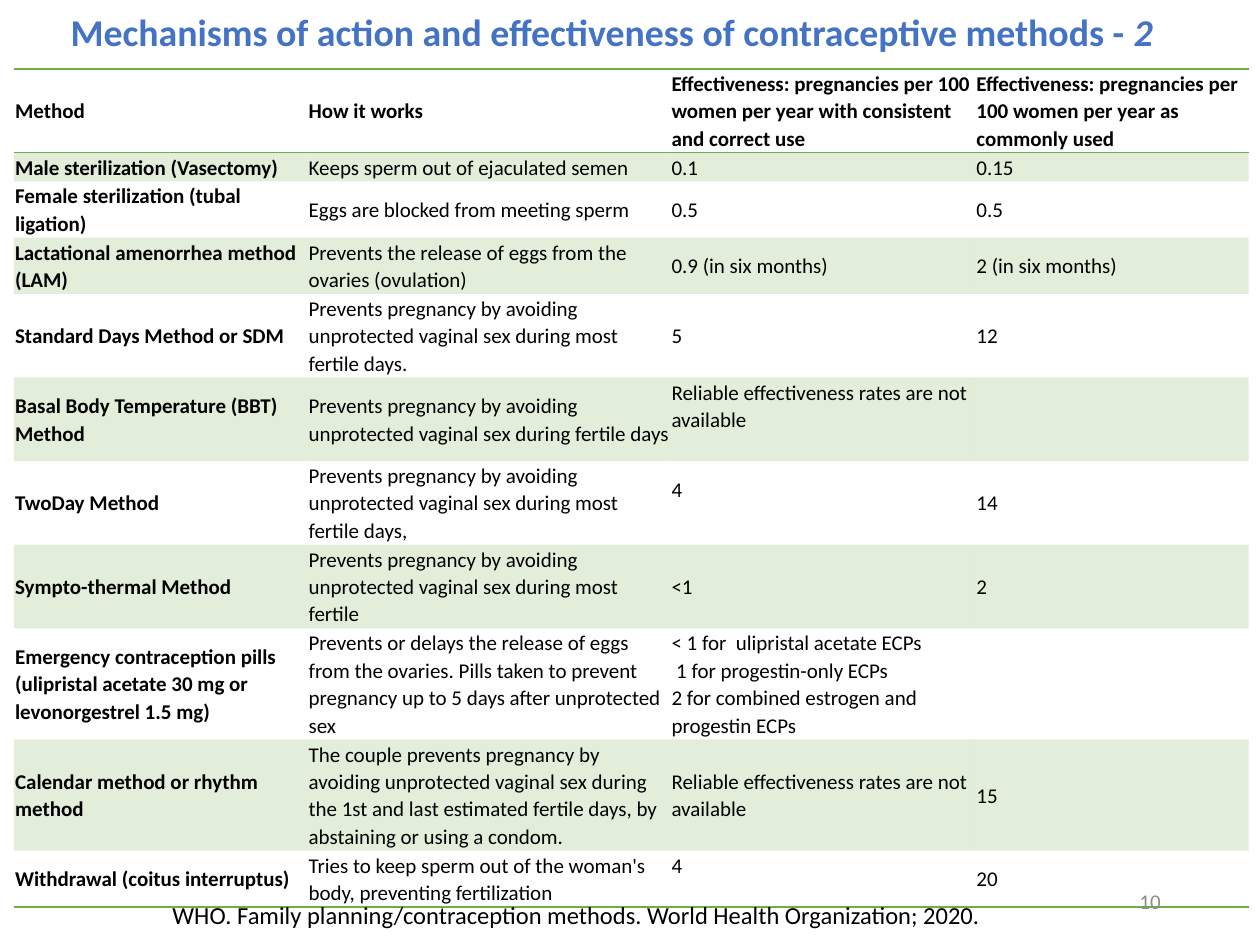
from lxml import etree
from pptx import Presentation
from pptx import util as u
from pptx.dml.color import RGBColor
from pptx.enum import text
from pptx.oxml.ns import qn

COLORS = {"title": "4472C4", "green": "70AD47", "text": "000000", "number": "8C8C8C"}
NO_STYLE_TABLE = "{2D5ABB26-0587-4C30-8999-92F81FD0307C}"
COLUMN_WIDTHS = [2.33, 2.88, 2.42, 2.17]
ROW_LINES = [3, 1, 2, 2, 3, 3, 3, 3, 4, 4, 2]
LINE_HEIGHT = u.Pt(15.7)
ROW_PADDING = u.Pt(0.7)
# Cells of the third column whose text sits half a line above the middle
RAISED_ROWS = {5, 6, 10}

METHODS = [
    ["Method", "How it works",
     "Effectiveness: pregnancies per 100 women per year with consistent and correct use",
     "Effectiveness: pregnancies per 100 women per year as commonly used"],
    ["Male sterilization (Vasectomy)", "Keeps sperm out of ejaculated semen", "0.1", "0.15"],
    ["Female sterilization (tubal ligation)", "Eggs are blocked from meeting sperm",
     "0.5", "0.5"],
    ["Lactational amenorrhea method (LAM)",
     "Prevents the release of eggs from the ovaries (ovulation)",
     "0.9 (in six months)", "2 (in six months)"],
    ["Standard Days Method or SDM",
     "Prevents pregnancy by avoiding unprotected vaginal sex during most fertile days.",
     "5", "12"],
    ["Basal Body Temperature (BBT) Method",
     "Prevents pregnancy by avoiding unprotected vaginal sex during fertile days",
     "Reliable effectiveness rates are not available", ""],
    ["TwoDay Method",
     "Prevents pregnancy by avoiding unprotected vaginal sex during most fertile days,",
     "4", "14"],
    ["Sympto-thermal Method",
     "Prevents pregnancy by avoiding unprotected vaginal sex during most fertile",
     "<1", "2"],
    ["Emergency contraception pills (ulipristal acetate 30 mg or levonorgestrel 1.5 mg)",
     "Prevents or delays the release of eggs from the ovaries. Pills taken to prevent "
     "pregnancy up to 5 days after unprotected sex",
     "< 1 for  ulipristal acetate ECPs\n 1 for progestin-only ECPs\n"
     "2 for combined estrogen and progestin ECPs", ""],
    ["Calendar method or rhythm method",
     "The couple prevents pregnancy by avoiding unprotected vaginal sex during the 1st "
     "and last estimated fertile days, by abstaining or using a condom.",
     "Reliable effectiveness rates are not available", "15"],
    ["Withdrawal (coitus interruptus)",
     "Tries to keep sperm out of the woman's body, preventing fertilization", "4", "20"],
]


class SlideBuilder:
    def __init__(self, slide, font="Calibri"):
        self.slide = slide
        self.font = font

    def run(self, paragraph, words, size, color, bold=False, italic=False):
        run = paragraph.add_run()
        run.text = words
        run.font.name = self.font
        run.font.size = u.Pt(size)
        run.font.bold = bold
        run.font.italic = italic
        run.font.color.rgb = RGBColor.from_string(COLORS[color])

    def title(self, box, words, number):
        shape = self.slide.shapes.title
        shape.left, shape.top, shape.width, shape.height = map(u.Inches, box)
        frame = shape.text_frame
        frame.auto_size = text.MSO_AUTO_SIZE.NONE
        frame.vertical_anchor = text.MSO_ANCHOR.MIDDLE
        paragraph = frame.paragraphs[0]
        paragraph.alignment = text.PP_ALIGN.LEFT
        paragraph.line_spacing = 0.9
        self.run(paragraph, words, 21.6, "title", bold=True)
        self.run(paragraph, number, 21.6, "title", bold=True, italic=True)

    def text_box(self, box, words, size, color, align=text.PP_ALIGN.LEFT,
                 anchor=text.MSO_ANCHOR.TOP):
        frame = self.slide.shapes.add_textbox(*map(u.Inches, box)).text_frame
        frame.word_wrap = True
        frame.vertical_anchor = anchor
        paragraph = frame.paragraphs[0]
        paragraph.alignment = align
        self.run(paragraph, words, size, color)

    def table(self, left, top, rows):
        heights = [lines * LINE_HEIGHT + ROW_PADDING for lines in ROW_LINES]
        frame = self.slide.shapes.add_table(
            len(rows), len(COLUMN_WIDTHS), left, top,
            u.Inches(sum(COLUMN_WIDTHS)), sum(heights))
        table = frame.table
        table.horz_banding = False
        table._tbl.tblPr.find(qn("a:tableStyleId")).text = NO_STYLE_TABLE
        for column, width in zip(table.columns, COLUMN_WIDTHS):
            column.width = u.Inches(width)
        last = len(rows) - 1
        for i, (row, height) in enumerate(zip(rows, heights)):
            table.rows[i].height = height
            for j, words in enumerate(row):
                cell = table.cell(i, j)
                self.cell_text(cell, words, bold=i == 0 or j == 0)
                if j == 2 and i in RAISED_ROWS:
                    cell.margin_bottom = LINE_HEIGHT
                self.cell_fill(cell, shaded=i % 2 == 1)
                if i == 0:
                    self.cell_borders(cell, ["lnT", "lnB"])
                elif i == last:
                    self.cell_borders(cell, ["lnB"])

    def cell_text(self, cell, words, bold):
        cell.vertical_anchor = text.MSO_ANCHOR.MIDDLE
        cell.margin_left = u.Inches(0.01)
        cell.margin_right = 0
        cell.margin_top = cell.margin_bottom = u.Pt(0.4)
        paragraph = cell.text_frame.paragraphs[0]
        paragraph.line_spacing = 1.07
        paragraph.space_after = u.Pt(8)
        paragraph.font.size = u.Pt(12)
        for k, line in enumerate(words.split("\n") if words else []):
            if k:
                paragraph.add_line_break()
            self.run(paragraph, line, 12, "text", bold)

    def cell_fill(self, cell, shaded):
        if not shaded:
            cell.fill.background()
            return
        cell.fill.solid()
        cell.fill.fore_color.rgb = RGBColor.from_string(COLORS["green"])
        color = cell._tc.tcPr.find(qn("a:solidFill")).find(qn("a:srgbClr"))
        etree.SubElement(color, qn("a:alpha"), val="20000")

    def cell_borders(self, cell, sides):
        for position, side in enumerate(sides):
            line = etree.Element(qn(f"a:{side}"), w=str(u.Pt(1)))
            fill = etree.SubElement(line, qn("a:solidFill"))
            etree.SubElement(fill, qn("a:srgbClr"), val=COLORS["green"])
            cell._tc.tcPr.insert(position, line)


def main():
    presentation = Presentation()
    presentation.slide_width = u.Inches(10)
    presentation.slide_height = u.Inches(7.5)
    title_only = presentation.slide_layouts[5]
    builder = SlideBuilder(presentation.slides.add_slide(title_only))

    builder.title((0.46, 0.07, 9.08, 0.4),
                  "Mechanisms of action and effectiveness of contraceptive methods - ", "2")
    builder.table(u.Inches(0.11), u.Pt(39.4), METHODS)
    builder.text_box((7.06, 6.95, 2.25, 0.4), "10", 12, "number",
                     text.PP_ALIGN.RIGHT, text.MSO_ANCHOR.MIDDLE)
    builder.text_box((1.27, 7.09, 8.73, 0.34),
                     "WHO. Family planning/contraception methods. "
                     "World Health Organization; 2020.", 14, "text")
    presentation.save("out.pptx")


if __name__ == "__main__":
    main()
